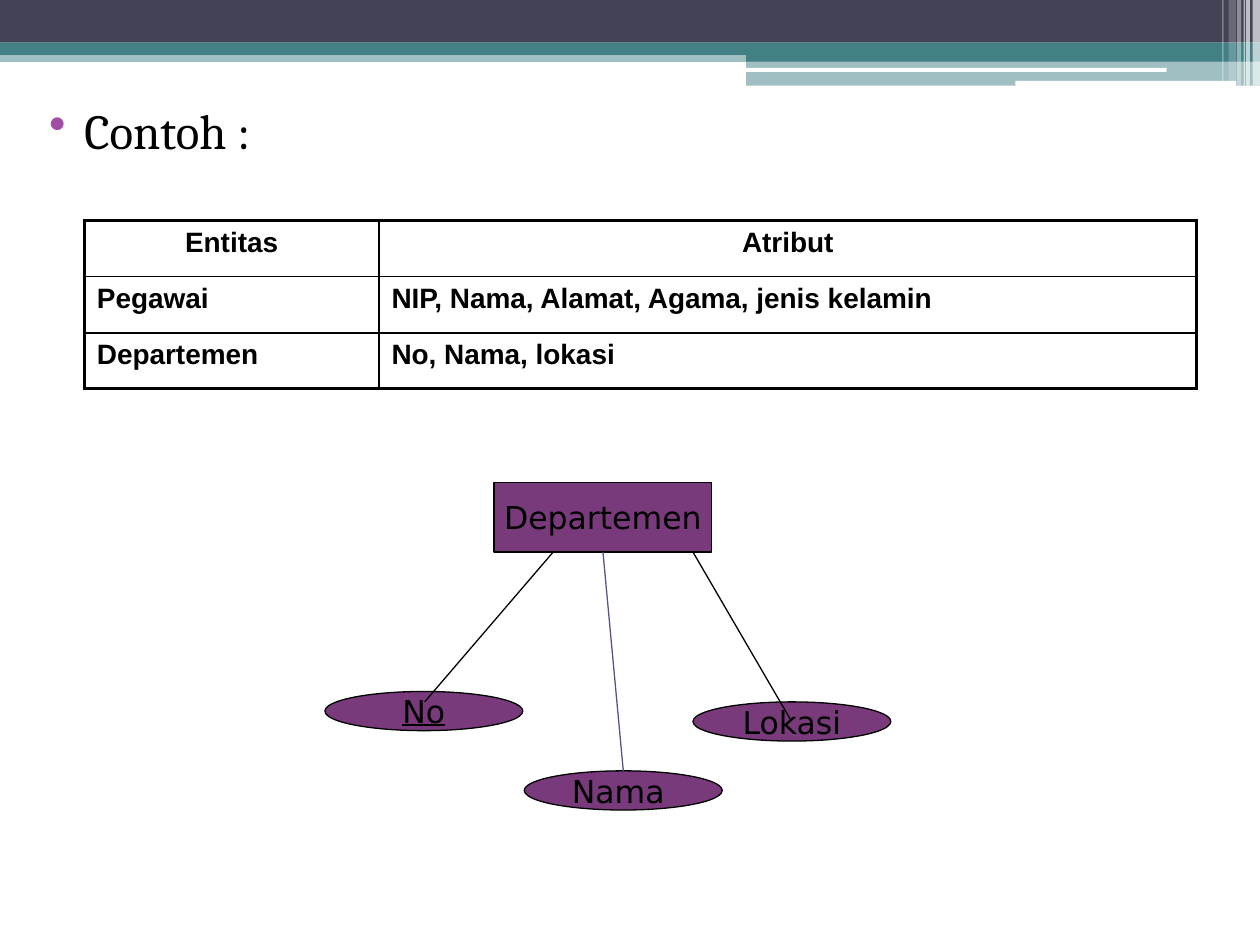
from lxml import etree
from pptx import Presentation, util as u
from pptx.dml.color import RGBColor
from pptx.enum import shapes, text
from pptx.oxml.ns import qn

Cm, Pt = u.Cm, u.Pt
RECT = shapes.MSO_SHAPE.RECTANGLE
ROUND = shapes.MSO_SHAPE.ROUNDED_RECTANGLE
OVAL = shapes.MSO_SHAPE.OVAL


def color(target, value):
    """Give a fill, or a font's or line's colour, a hex colour."""
    if hasattr(target, "solid"):
        target.solid()
        target = target.fore_color
    target.rgb = RGBColor.from_string(value)


def add_shape(kind, left, top, width, height, fill, opacity=100):
    shape = slide.shapes.add_shape(kind, Cm(left), Cm(top), Cm(width), Cm(height))
    shape.shadow.inherit = False
    shape.line.fill.background()
    color(shape.fill, fill)
    if opacity < 100:
        value = shape.fill._xPr.find(qn("a:solidFill"))[0]
        etree.SubElement(value, qn("a:alpha"), val=str(opacity * 1000))
    return shape


presentation = Presentation()
presentation.slide_width, presentation.slide_height = Cm(25.4), Cm(19.05)
slide = presentation.slides.add_slide(presentation.slide_layouts[6])

# Header bands
for band in [
    (RECT, 0, 1.02, 25.4, 0.23, "438086", 50),
    (RECT, 0, 0, 25.4, 0.86, "424456"),
    (RECT, 0, 0.86, 25.4, 0.25, "438086"),
    (RECT, 15.04, 0.99, 10.36, 0.25, "438086"),
    (RECT, 15.04, 1.22, 10.36, 0.51, "438086", 50),
    (ROUND, 15.01, 1.37, 8.51, 0.08, "FFFFFF"),
    (ROUND, 20.47, 1.63, 4.45, 0.1, "FFFFFF"),
]:
    add_shape(*band)

# Vertical stripes at the right end of the header
for left, width, height, opacity in [
    (25.25, 0.15, 1.73, 65), (25.12, 0.08, 1.73, 65), (25.07, 0.03, 1.73, 60),
    (24.94, 0.08, 1.73, 40), (24.77, 0.15, 1.63, 20), (24.64, 0.03, 1.63, 30),
]:
    add_shape(RECT, left, 0, width, height, "FFFFFF", opacity)

# Bulleted heading
body = slide.shapes.add_textbox(Cm(0.43), Cm(1.91), Cm(23.7), Cm(16.51))
body.text_frame.word_wrap = True
paragraph = body.text_frame.paragraphs[0]
paragraph.text = "Contoh :"
paragraph.space_before = Pt(3)
paragraph.font.size, paragraph.font.name = Pt(28), "Cambria"
color(paragraph.font.color, "000000")
properties = paragraph._p.get_or_add_pPr()
properties.set("marL", str(Cm(1.02)))
properties.set("indent", str(Cm(-0.71)))
bullet_color = etree.Element(qn("a:buClr"))
etree.SubElement(bullet_color, qn("a:srgbClr"), val="A04DA3")
bullet = etree.Element(qn("a:buChar"), char="•")
properties.find(qn("a:spcBef")).addnext(bullet_color)
bullet_color.addnext(bullet)

# Table of entities and attributes: thick outer border, thin inner lines
rows = [
    ("Entitas", "Atribut"),
    ("Pegawai", "NIP, Nama, Alamat, Agama, jenis kelamin"),
    ("Departemen", "No, Nama, lokasi"),
]
table = slide.shapes.add_table(
    len(rows), 2, Cm(1.7), Cm(4.45), Cm(22.42), Cm(3.39)).table
table.columns[0].width, table.columns[1].width = Cm(5.94), Cm(16.48)
for row_index, row in enumerate(rows):
    table.rows[row_index].height = Cm(1.13)
    for column_index, words in enumerate(row):
        cell = table.cell(row_index, column_index)
        cell.text = words
        paragraph = cell.text_frame.paragraphs[0]
        if row_index == 0:
            paragraph.alignment = text.PP_ALIGN.CENTER
        paragraph.font.size, paragraph.font.name = Pt(16), "Arial"
        paragraph.font.bold = True
        color(paragraph.font.color, "000000")
        outer_sides = {
            "lnL": column_index == 0,
            "lnR": column_index == 1,
            "lnT": row_index == 0,
            "lnB": row_index == len(rows) - 1,
        }
        cell_properties = cell._tc.get_or_add_tcPr()
        for side, outer in outer_sides.items():
            border = etree.SubElement(
                cell_properties, qn("a:" + side), w=str(Pt(2.25 if outer else 1)))
            border_fill = etree.SubElement(border, qn("a:solidFill"))
            etree.SubElement(border_fill, qn("a:srgbClr"), val="000000")
        cell.fill.background()

# Entity and its attributes
nodes = {}
for words, kind, left, top, width, height in [
    ("Departemen", RECT, 9.96, 9.73, 4.39, 1.4),
    ("No", OVAL, 6.55, 13.94, 3.99, 0.79),
    ("Nama ", OVAL, 10.57, 15.54, 3.99, 0.79),
    ("Lokasi", OVAL, 13.97, 14.15, 3.99, 0.79),
]:
    shape = add_shape(kind, left, top, width, height, "783A7A")
    color(shape.line.fill, "000000")
    shape.line.width = Pt(0.75)
    shape.text_frame.word_wrap = False
    shape.text_frame.vertical_anchor = text.MSO_ANCHOR.MIDDLE
    paragraph = shape.text_frame.paragraphs[0]
    paragraph.text = words
    paragraph.alignment = text.PP_ALIGN.CENTER
    paragraph.font.size, paragraph.font.name = Pt(18), "DejaVu Sans"
    if words == "No":
        paragraph.font.underline = True
    color(paragraph.font.color, "000000")
    nodes[words.strip()] = shape

# Lines from the entity to its attributes
for name, line_color, *ends in [
    ("No", "000000", 11.15, 11.13, 8.56, 14.15),
    ("Lokasi", "000000", 13.97, 11.13, 15.95, 14.53),
    ("Nama", "53548A", 12.16, 11.13, 12.57, 15.54),
]:
    connector = slide.shapes.add_connector(
        shapes.MSO_CONNECTOR.STRAIGHT, *[Cm(end) for end in ends])
    color(connector.line.fill, line_color)
    connector.line.width = Pt(0.75)
    etree.SubElement(connector._element.spPr, qn("a:effectLst"))
    if name == "Nama":
        connector.begin_connect(nodes["Departemen"], 2)
        connector.end_connect(nodes[name], 0)

presentation.save("out.pptx")
